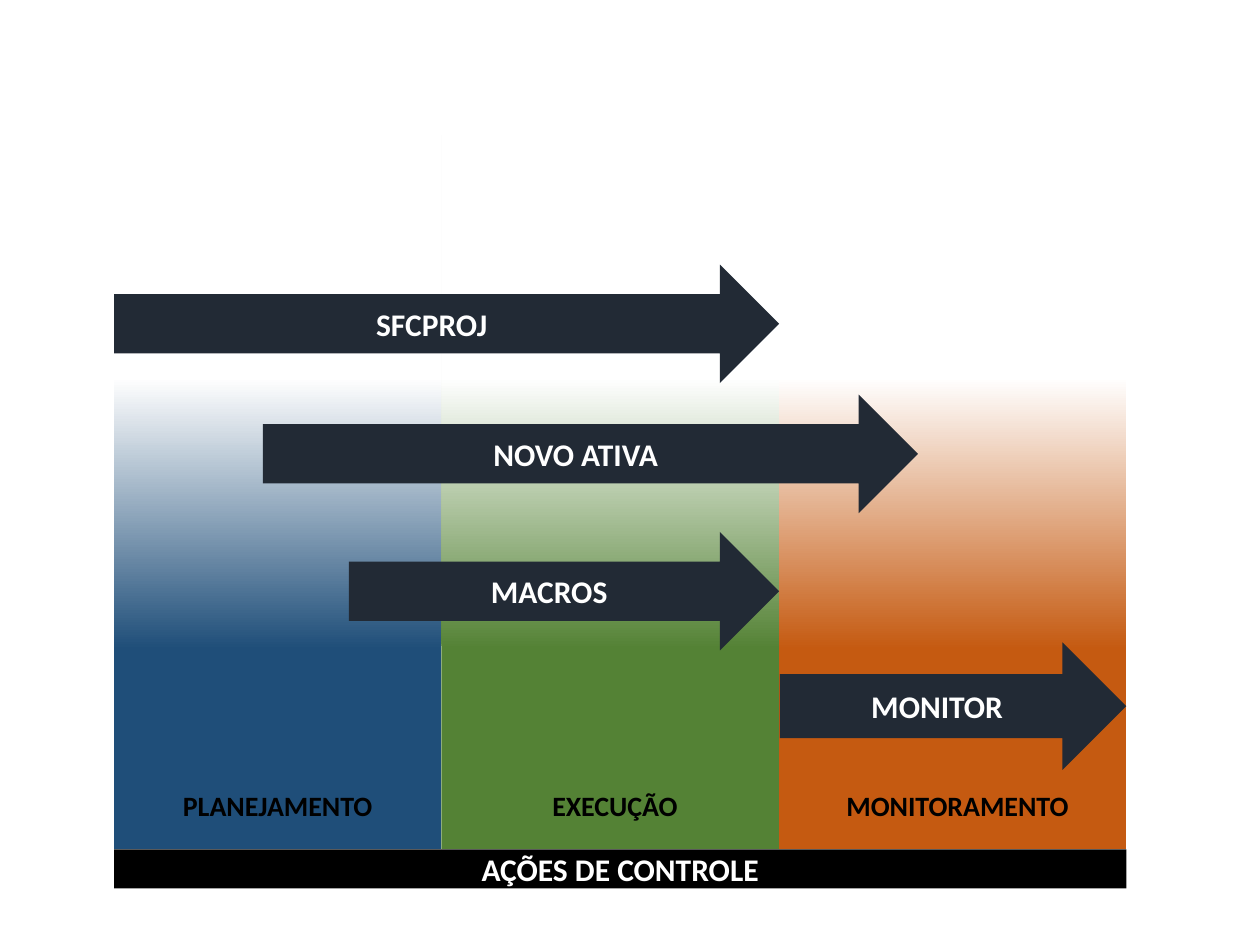
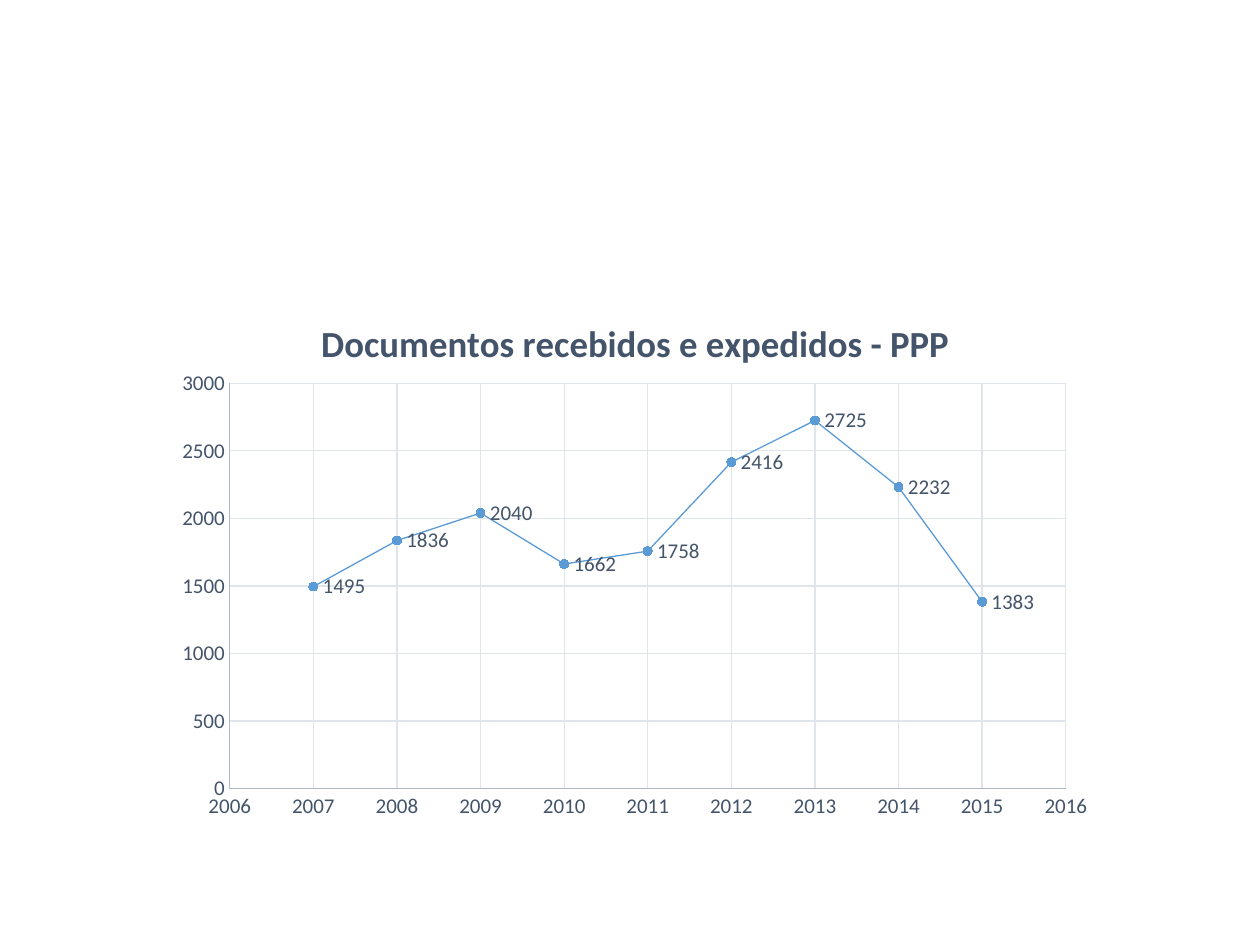
from lxml import etree
from pptx import Presentation
from pptx.chart.data import XyChartData
from pptx.chart.datalabel import DataLabels
from pptx.dml.color import RGBColor
from pptx.enum.chart import XL_CHART_TYPE as ChartType
from pptx.enum.chart import XL_LABEL_POSITION as LabelPosition
from pptx.enum.chart import XL_MARKER_STYLE as MarkerStyle
from pptx.enum.chart import XL_TICK_MARK as TickMark
from pptx.enum.shapes import MSO_SHAPE as Preset
from pptx.enum.text import MSO_ANCHOR as Anchor
from pptx.enum.text import PP_ALIGN as Align
from pptx.oxml.ns import qn
from pptx.util import Pt

# Content: phases as (name, fill colour, width of band, width of label column)
PHASES = [
    ("PLANEJAMENTO", "blue", 187, 187),
    ("EXECUÇÃO", "green", 193, 198.5),
    ("MONITORAMENTO", "orange", 198.5, 193),
]
# Systems as (name, left, top, width, height)
SYSTEMS = [
    ("SFCPROJ", 65.2, 151.2, 380, 67.7),
    ("NOVO ATIVA", 150.3, 225.5, 374.3, 67.7),
    ("MACROS", 199.3, 304, 245.9, 67.7),
    ("MONITOR", 445.6, 367, 198, 73),
]
FOOTING = "AÇÕES DE CONTROLE"
CHART_TITLE = "Documentos recebidos e expedidos - PPP"
FIRST_YEAR = 2007
DOCUMENTS = [1495, 1836, 2040, 1662, 1758, 2416, 2725, 2232, 1383]

# Shared style
FONT = "Calibri"
COLORS = {
    "white": "FFFFFF", "black": "000000", "navy": "222A35",
    "blue": "1F4E79", "green": "548235", "orange": "C55A11",
    "slate": "44546A", "axis": "ADB9CA", "grid": "E0E5EB", "series": "5B9BD5",
}
LEFT, BAND_TOP, BAND_BOTTOM = 65.2, 77, 485.3
TOTAL_WIDTH = sum(phase[2] for phase in PHASES)
PLAIN_TABLE = "{2D5ABB26-0587-4C30-8999-92F81FD0307C}"


def color(name):
    return RGBColor.from_string(COLORS[name])


def style_font(font, size, color_name, bold=False):
    font.name, font.size, font.bold = FONT, Pt(size), bold
    font.color.rgb = color(color_name)


def write(text_frame, text, size=18, color_name="white", bold=True, align=Align.CENTER):
    paragraph = text_frame.paragraphs[0]
    paragraph.alignment = align
    run = paragraph.add_run()
    run.text = text
    style_font(run.font, size, color_name, bold)


def add_shape(slide, preset, left, top, width, height, fill=None, text=None):
    shape = slide.shapes.add_shape(preset, Pt(left), Pt(top), Pt(width), Pt(height))
    shape.shadow.inherit = False
    shape.line.fill.background()
    if fill:
        shape.fill.solid()
        shape.fill.fore_color.rgb = color(fill)
    if text:
        shape.text_frame.vertical_anchor = Anchor.MIDDLE
        write(shape.text_frame, text)
    return shape


def fade_upwards(shape, color_name):
    shape.fill.gradient()
    shape.fill.gradient_angle = 90
    stops = zip(shape.fill.gradient_stops, [(0.28, color_name), (0.66, "white")])
    for stop, (position, name) in stops:
        stop.position = position
        stop.color.rgb = color(name)


def add_phase_labels(slide):
    frame = slide.shapes.add_table(
        1, len(PHASES), Pt(LEFT), Pt(448), Pt(TOTAL_WIDTH), Pt(29.5))
    table = frame.table
    table.first_row = table.horz_banding = False
    frame._element.find(".//" + qn("a:tableStyleId")).text = PLAIN_TABLE
    for index, (name, _, _, width) in enumerate(PHASES):
        table.columns[index].width = Pt(width)
        cell = table.cell(0, index)
        cell.fill.background()
        write(cell.text_frame, name, size=16, color_name="black")


def build_phases(slide):
    # Fading bands, side by side
    left = LEFT
    for _, color_name, width, _ in PHASES:
        band = add_shape(slide, Preset.RECTANGLE, left, BAND_TOP, width,
                         BAND_BOTTOM - BAND_TOP)
        fade_upwards(band, color_name)
        left += width
    # Systems, labels and footing
    for name, *box in SYSTEMS:
        add_shape(slide, Preset.RIGHT_ARROW, *box, fill="navy", text=name)
    add_phase_labels(slide)
    add_shape(slide, Preset.RECTANGLE, LEFT, BAND_BOTTOM, TOTAL_WIDTH, 22.3,
              fill="black", text=FOOTING)


def set_layout(parent, position, **fractions):
    """Place a chart part by fractions of the chart's size."""
    for previous in parent.findall(qn("c:layout")):
        parent.remove(previous)
    layout = etree.Element(qn("c:layout"))
    manual = etree.SubElement(layout, qn("c:manualLayout"))
    settings = {"xMode": "edge", "yMode": "edge", **fractions}
    if "w" in fractions:
        settings = {"layoutTarget": "inner", **settings}
    for tag, value in settings.items():
        etree.SubElement(manual, qn("c:" + tag)).set("val", str(value))
    parent.insert(position, layout)


def style_axis(axis, minimum, maximum, step):
    axis.minimum_scale, axis.maximum_scale, axis.major_unit = minimum, maximum, step
    axis.major_tick_mark = axis.minor_tick_mark = TickMark.NONE
    axis.has_major_gridlines = True
    for part, name in [(axis, "axis"), (axis.major_gridlines, "grid")]:
        part.format.line.color.rgb = color(name)
        part.format.line.width = Pt(0.75)
    style_font(axis.tick_labels.font, 12, "slate")


def build_chart(slide):
    data = XyChartData()
    points = data.add_series("Series 1")
    for year, count in enumerate(DOCUMENTS, FIRST_YEAR):
        points.add_data_point(year, count)
    chart = slide.shapes.add_chart(
        ChartType.XY_SCATTER_LINES, Pt(93.6), Pt(162), Pt(538.6), Pt(311.8), data).chart
    style_font(chart.font, 10, "black")
    chart.has_legend = False
    chart.plots[0].vary_by_categories = False

    # Title and plot area
    chart.has_title = True
    write(chart.chart_title.text_frame, CHART_TITLE, size=21, color_name="slate")
    set_layout(chart.chart_title._element, 1, x=0.16, y=0.05)
    plot_area = chart._chartSpace.find(".//" + qn("c:plotArea"))
    set_layout(plot_area, 0, x=0.07, y=0.183, w=0.887, h=0.743)

    # Axes
    style_axis(chart.category_axis, FIRST_YEAR - 1, FIRST_YEAR + len(DOCUMENTS), 1)
    style_axis(chart.value_axis, 0, 3000, 500)

    # Series, markers and labels
    series = chart.plots[0].series[0]
    series.format.line.color.rgb = color("series")
    series.format.line.width = Pt(0.75)
    series.marker.style, series.marker.size = MarkerStyle.CIRCLE, 5
    series.marker.format.fill.solid()
    series.marker.format.fill.fore_color.rgb = color("series")
    series.marker.format.line.color.rgb = color("series")
    labels = DataLabels(series._element.get_or_add_dLbls())
    labels.show_value = True
    labels.position = LabelPosition.RIGHT
    style_font(labels.font, 12, "slate")


def main():
    presentation = Presentation()
    presentation.slide_width, presentation.slide_height = Pt(720), Pt(540)
    blank = presentation.slide_layouts[6]
    for build in (build_phases, build_chart):
        build(presentation.slides.add_slide(blank))
    presentation.save("out.pptx")


if __name__ == "__main__":
    main()
